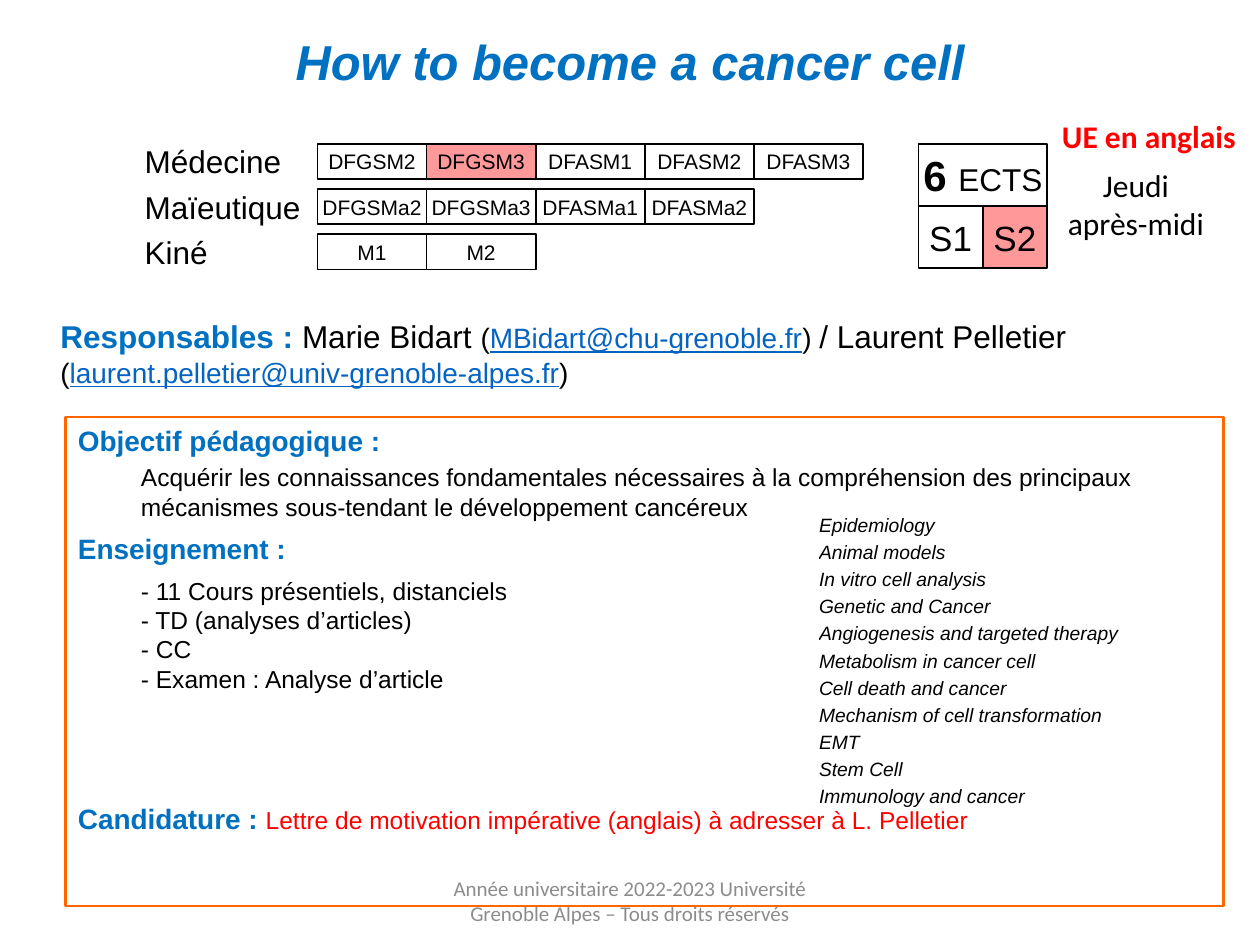
from dataclasses import dataclass

from pptx import Presentation
from pptx.dml.color import RGBColor
from pptx.enum.shapes import MSO_SHAPE as Preset
from pptx.enum.text import MSO_ANCHOR as Anchor, PP_ALIGN as Align
from pptx.util import Inches, Pt


@dataclass(frozen=True)
class Theme:
    heading: str = "0070C0"
    ink: str = "000000"
    alert: str = "FF0000"
    link: str = "0563C1"
    muted: str = "8C8C8C"
    frame: str = "FF6600"
    chosen: str = "FF9999"
    plain: str = "FFFFFF"
    body_font: str = "Arial"
    side_font: str = "Calibri"
    title: int = 28
    credits: int = 24
    semester: int = 20
    large: int = 18
    section: int = 16
    body: int = 14
    small: int = 12
    topic: int = 11


THEME = Theme()
COLUMNS, ROWS = 100, 75


@dataclass
class Run:
    text: str
    size: int = THEME.body
    color: str = THEME.ink
    bold: bool = False
    italic: bool = False
    underline: bool = False
    font: str = THEME.body_font


@dataclass
class Para:
    runs: list
    before: float = 0
    indent: float = 0
    align: Align = Align.LEFT


class SlideBuilder:
    """Places elements on a grid of COLUMNS by ROWS."""

    def __init__(self, deck, theme):
        self.theme = theme
        self.column = deck.slide_width / COLUMNS
        self.row = deck.slide_height / ROWS
        self.slide = deck.slides.add_slide(deck.slide_layouts[6])

    def area(self, left, top, width, height):
        return (round(left * self.column), round(top * self.row),
                round(width * self.column), round(height * self.row))

    def set_text(self, frame, paras, anchor=Anchor.TOP, insets=(0.1, 0.05, 0.1, 0.05), wrap=True):
        frame.word_wrap = wrap
        frame.vertical_anchor = anchor
        (frame.margin_left, frame.margin_top,
         frame.margin_right, frame.margin_bottom) = map(Inches, insets)
        for number, para in enumerate(paras):
            line = frame.paragraphs[0] if number == 0 else frame.add_paragraph()
            line.alignment = para.align
            line.space_before = Pt(para.before)
            if para.indent:
                line._p.get_or_add_pPr().set("marL", str(Inches(para.indent)))
            for part in para.runs:
                run = line.add_run()
                run.text = part.text
                font = run.font
                font.name, font.size = part.font, Pt(part.size)
                font.bold, font.italic, font.underline = part.bold, part.italic, part.underline
                font.color.rgb = RGBColor.from_string(part.color)

    def text(self, area, paras, **layout):
        box = self.slide.shapes.add_textbox(*self.area(*area))
        self.set_text(box.text_frame, paras, **layout)

    def box(self, area, paras, line, weight=1, fill=None, **layout):
        shape = self.slide.shapes.add_shape(Preset.RECTANGLE, *self.area(*area))
        shape.shadow.inherit = False
        shape.line.color.rgb = RGBColor.from_string(line)
        shape.line.width = Pt(weight)
        if fill:
            shape.fill.solid()
            shape.fill.fore_color.rgb = RGBColor.from_string(fill)
        else:
            shape.fill.background()
        self.set_text(shape.text_frame, paras, **layout)

    def cell(self, area, runs, chosen=False):
        fill = self.theme.chosen if chosen else self.theme.plain
        self.box(area, [Para(runs, align=Align.CENTER)], self.theme.ink, fill=fill,
                 anchor=Anchor.MIDDLE, insets=(0, 0, 0, 0), wrap=False)

    def topics(self, area, entries, columns):
        """Table with one topic a row; each entry is (topic, columns spanned)."""
        table = self.slide.shapes.add_table(len(entries), columns, *self.area(*area)).table
        table.first_row = table.horz_banding = False
        for row, (topic, span) in enumerate(entries):
            for column in range(columns):
                cell = table.cell(row, column)
                cell.fill.background()
                cell.vertical_anchor = Anchor.MIDDLE
                cell.margin_left = cell.margin_top = cell.margin_right = Inches(0.01)
                cell.margin_bottom = 0
                line = cell.text_frame.paragraphs[0]
                line.font.size = Pt(self.theme.topic)
                if column == 0:
                    run = line.add_run()
                    run.text = topic
                    run.font.name, run.font.size = self.theme.body_font, Pt(self.theme.topic)
                    run.font.italic = True
                    run.font.color.rgb = RGBColor.from_string(self.theme.ink)
            if span > 1:
                table.cell(row, 0).merge(table.cell(row, span - 1))


TOPICS = [
    ("Epidemiology", 2), ("Animal models", 2), ("In vitro cell analysis", 2),
    ("Genetic and Cancer", 2), ("Angiogenesis and targeted therapy", 3),
    ("Metabolism in cancer cell", 2), ("Cell death and cancer", 2),
    ("Mechanism of cell transformation", 3), ("EMT", 1), ("Stem Cell", 1),
    ("Immunology and cancer", 2),
]
TRACKS = [
    ("Médecine", ["DFGSM2", "DFGSM3", "DFASM1", "DFASM2", "DFASM3"]),
    ("Maïeutique", ["DFGSMa2", "DFGSMa3", "DFASMa1", "DFASMa2"]),
    ("Kiné", ["M1", "M2"]),
]
OPEN_YEAR = "DFGSM3"
TEACHING = ["- 11 Cours présentiels, distanciels", "- TD (analyses d’articles)",
            "- CC", "- Examen : Analyse d’article"]


def section(title, size=THEME.section):
    return Run(title, size, THEME.heading, bold=True)


def email(address):
    return Run(address, THEME.section, THEME.link, underline=True)


def main():
    deck = Presentation()
    deck.slide_width, deck.slide_height = Inches(10), Inches(7.5)
    page = SlideBuilder(deck, THEME)

    page.text((0, 2, 100, 5.7), [Para(
        [Run("How to become a cancer cell", THEME.title, THEME.heading, bold=True, italic=True)],
        before=6, align=Align.CENTER)])
    page.topics((64.9, 40.6, 35.1, 23.7), TOPICS, 3)
    page.text((33.1, 69.5, 33.8, 4), [Para(
        [Run("Année universitaire 2022-2023 Université Grenoble Alpes – Tous droits réservés",
             THEME.small, THEME.muted, font=THEME.side_font)],
        align=Align.CENTER)], anchor=Anchor.MIDDLE)

    objective = ("Acquérir les connaissances fondamentales nécessaires à la compréhension "
                 "des principaux mécanismes sous-tendant le développement cancéreux")
    page.box((5.2, 33.1, 91.9, 38.8), [
        Para([section("Objectif pédagogique :")], before=6),
        Para([Run(objective)], before=3, indent=0.5),
        Para([section("Enseignement :")], before=6),
        *(Para([Run(item)], before=0 if number else 6, indent=0.5)
          for number, item in enumerate(TEACHING)),
        Para([section("Candidature : "),
              Run("Lettre de motivation impérative (anglais) à adresser à L. Pelletier",
                  color=THEME.alert)], before=62),
    ], THEME.frame, weight=1.5)

    first_year, year_width, first_track, track_step = 25.2, 8.66, 11.4, 3.6
    for track, (name, years) in enumerate(TRACKS):
        top = first_track + track * track_step
        page.text((10.5, top - 0.6, 14.4, 4), [Para([Run(name, THEME.large)])], wrap=False)
        for number, year in enumerate(years):
            page.cell((first_year + number * year_width, top, year_width, 2.8),
                      [Run(year, THEME.small)], year == OPEN_YEAR)

    credits_left, semester_width, credits_height = 72.9, 5.1, 4.95
    page.cell((credits_left, first_track, 2 * semester_width, credits_height),
              [Run("6 ", THEME.credits, bold=True), Run("ECTS", THEME.large)])
    for number, semester in enumerate(["S1", "S2"]):
        page.cell((credits_left + number * semester_width, first_track + credits_height,
                   semester_width, credits_height),
                  [Run(semester, THEME.semester)], semester == "S2")

    page.text((83.6, 12.7, 13.1, 7.1), [Para(
        [Run("Jeudi après-midi", THEME.large, font=THEME.side_font)], align=Align.CENTER)])
    page.text((4.8, 25.2, 92.1, 5.7), [Para([
        section("Responsables : ", THEME.large), Run("Marie Bidart ", THEME.large),
        Run("(", THEME.section), email("MBidart@chu-grenoble.fr"), Run(") ", THEME.section),
        Run("/ Laurent Pelletier ", THEME.large),
        Run("(", THEME.section), email("laurent.pelletier@univ-grenoble-alpes.fr"),
        Run(")", THEME.section),
    ], before=6)], insets=(0, 0, 0.1, 0))
    page.text((83.3, 8.8, 17.2, 4), [Para(
        [Run("UE en anglais", THEME.large, THEME.alert, bold=True, font=THEME.side_font)],
        before=12)])

    deck.save("out.pptx")


if __name__ == "__main__":
    main()
